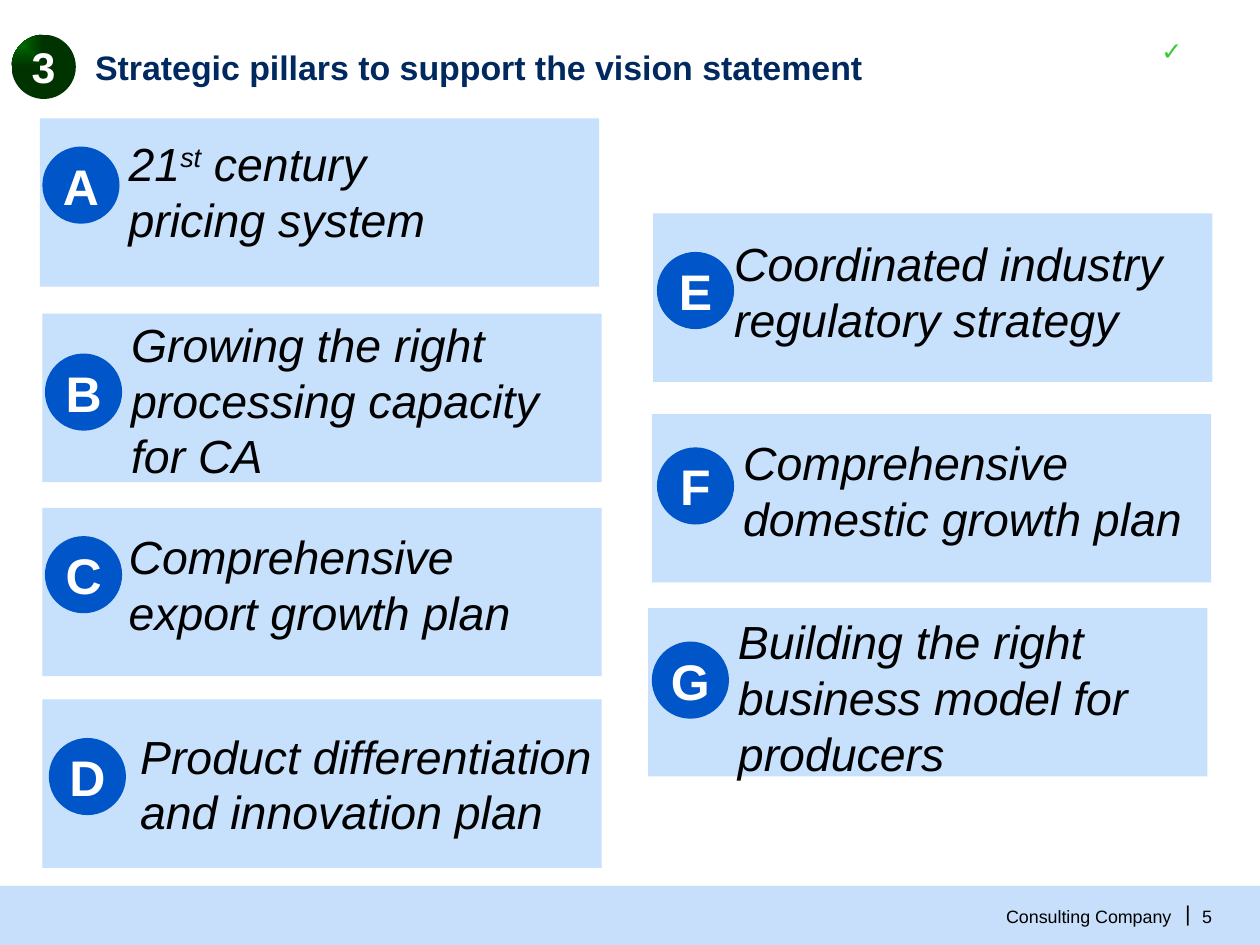
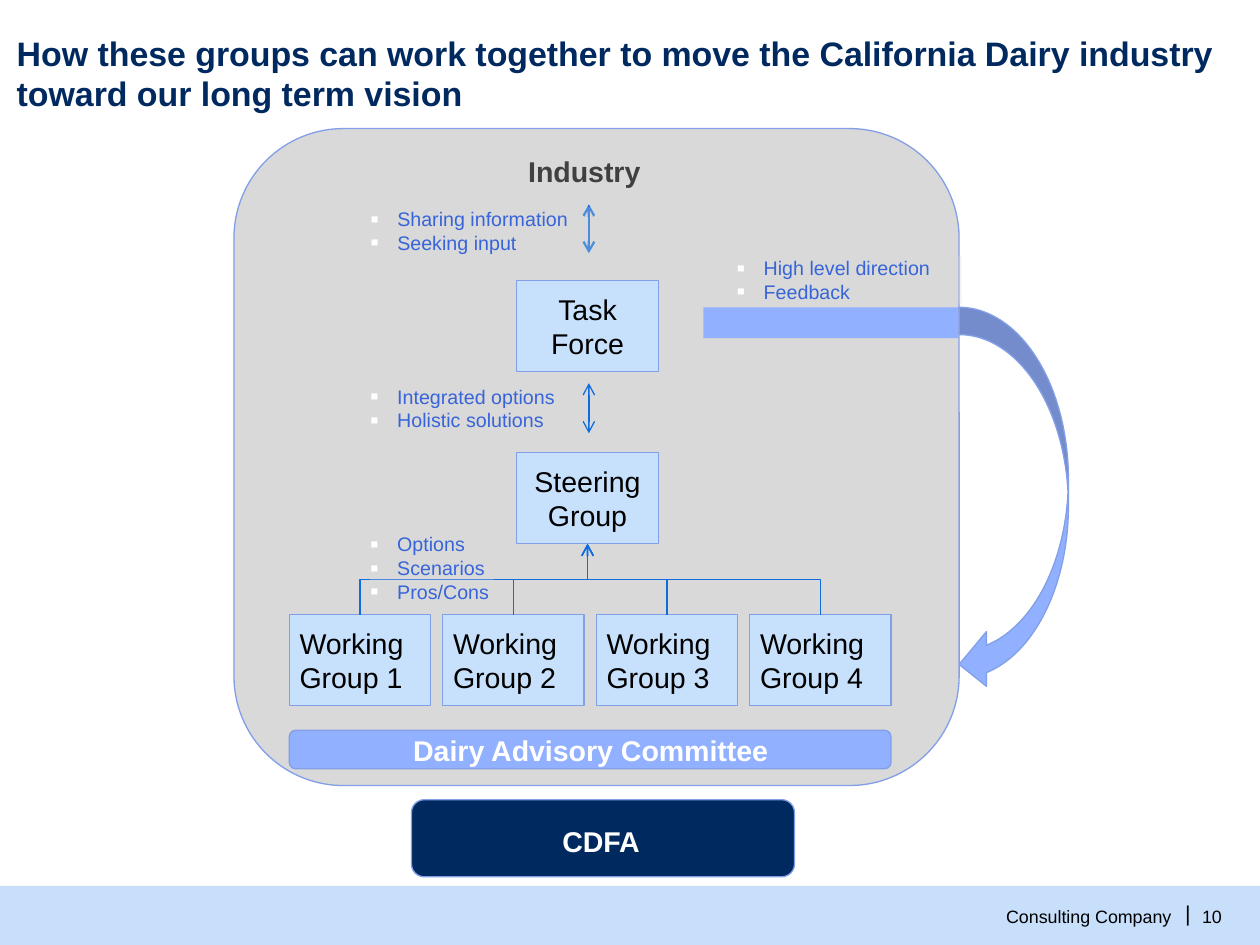
from lxml import etree
from pptx import Presentation
from pptx.dml.color import RGBColor
from pptx.enum.shapes import MSO_CONNECTOR, MSO_SHAPE
from pptx.enum.text import MSO_ANCHOR, PP_ALIGN
from pptx.oxml.ns import qn
from pptx.util import Inches, Pt

RECTANGLE = MSO_SHAPE.RECTANGLE
ROUNDED = MSO_SHAPE.ROUNDED_RECTANGLE
OVAL = MSO_SHAPE.OVAL
CURVED_ARROW = MSO_SHAPE.CURVED_LEFT_ARROW
STRAIGHT = MSO_CONNECTOR.STRAIGHT
ELBOW = MSO_CONNECTOR.ELBOW
LEFT, CENTER, RIGHT = PP_ALIGN.LEFT, PP_ALIGN.CENTER, PP_ALIGN.RIGHT
TOP, MIDDLE = MSO_ANCHOR.TOP, MSO_ANCHOR.MIDDLE

FONT = "Arial"
NAVY, BLACK, WHITE = "002960", "000000", "FFFFFF"
BAND, PANEL, BADGE = "C7DFFB", "C7E0FB", "0055C8"
GRAY, DARK_GRAY = "D9D9D9", "404040"
PERIWINKLE, OUTLINE = "91B0FF", "839FE7"
ARROW, LIST_TEXT, CHECK = "0E6CE0", "3764D8", "33CC33"

PILLARS = [
    ("A", (0.31, 0.92), (0.33, 1.14), (1, 1.05, 2.86), ["21", "st", " century pricing system"]),
    ("B", (0.33, 2.44), (0.35, 2.75), (1.02, 2.46, 3.63),
     ["Growing the right processing capacity for CA"]),
    ("C", (0.33, 3.95), (0.35, 4.17), (1, 4.11, 3.45), ["Comprehensive export growth plan"]),
    ("D", (0.33, 5.44), (0.38, 5.74), (1.09, 5.66, 3.63),
     ["Product differentiation and innovation plan"]),
    ("E", (5.08, 1.66), (5.11, 1.96), (5.71, 1.83, 3.65),
     ["Coordinated industry regulatory strategy"]),
    ("F", (5.07, 3.22), (5.11, 3.48), (5.78, 3.38, 3.61), ["Comprehensive domestic growth plan"]),
    ("G", (5.04, 4.73), (5.07, 4.99), (5.74, 4.77, 3.63),
     ["Building the right business model for producers"]),
]

EXCHANGES = [
    ((2.88, 4.14, 0.96, 0.56), ["Options", "Scenarios", "Pros/Cons"]),
    ((2.88, 2.99, 1.57, 0.37), ["Integrated options", "Holistic solutions"]),
    ((2.88, 1.61, 1.75, 0.37), ["Sharing information", "Seeking input"]),
    ((5.73, 1.99, 1.75, 0.37), ["High level direction", "Feedback"]),
]


def color(value):
    return RGBColor.from_string(value)


def child(parent, tag, **attributes):
    return etree.SubElement(parent, qn(tag), attributes)


def style_paragraph(paragraph, size, text_color, bold=False, italic=False, align=LEFT):
    paragraph.alignment = align
    font = paragraph.font
    font.name, font.size = FONT, Pt(size)
    font.bold, font.italic = bold, italic
    font.color.rgb = color(text_color)


def set_frame(shape, anchor=TOP, inset=0.0):
    frame = shape.text_frame
    frame.word_wrap = True
    frame.vertical_anchor = anchor
    frame.margin_left = frame.margin_right = Inches(inset)
    frame.margin_top = frame.margin_bottom = Inches(inset)
    return frame


def write(shape, text, size, text_color, anchor=TOP, inset=0.0, **style):
    frame = set_frame(shape, anchor, inset)
    frame.text = text
    style_paragraph(frame.paragraphs[0], size, text_color, **style)


def add_box(slide, kind, box, fill, line=None):
    shape = slide.shapes.add_shape(kind, *map(Inches, box))
    shape.shadow.inherit = False
    shape.fill.solid()
    shape.fill.fore_color.rgb = color(fill)
    if line:
        shape.line.color.rgb = color(line)
        shape.line.width = Pt(0.75)
    else:
        shape.line.fill.background()
    return shape


def add_text(slide, box, text, size, text_color, **style):
    shape = slide.shapes.add_textbox(*map(Inches, box))
    write(shape, text, size, text_color, **style)
    return shape


def add_slide(presentation, title, title_box, number):
    slide = presentation.slides.add_slide(presentation.slide_layouts[5])
    placeholder = slide.shapes.title
    placeholder.left, placeholder.top, placeholder.width, placeholder.height = map(Inches, title_box)
    write(placeholder, title, 19, NAVY, bold=True)
    add_box(slide, RECTANGLE, (0, 6.89, 9.8, 0.46), BAND)
    add_text(slide, (7.75, 7.04, 1.36, 0.17), "Consulting Company", 10, BLACK,
             anchor=MIDDLE, align=RIGHT)
    add_text(slide, (9.21, 7, 0.05, 0.2), "|", 12, BLACK, anchor=MIDDLE, align=RIGHT)
    add_text(slide, (9.35, 7.04, 0.23, 0.17), number, 10, BLACK, anchor=MIDDLE)
    return slide


def add_section_badge(slide, number):
    badge = add_box(slide, OVAL, (0.09, 0.27, 0.5, 0.5), BADGE)
    badge.fill.gradient()
    for stop, value in zip(badge.fill.gradient_stops, ("008000", "003300")):
        stop.color.rgb = color(value)
    gradient = badge._element.spPr.find(qn("a:gradFill"))
    gradient.remove(gradient.find(qn("a:lin")))
    shade = child(gradient, "a:path")
    shade.set("path", "rect")
    child(shade, "a:fillToRect", r="100000", b="100000")
    write(badge, number, 24, WHITE, anchor=MIDDLE, bold=True, align=CENTER)


def add_pillar(slide, letter, panel, badge, text_place, pieces):
    add_box(slide, RECTANGLE, (*panel, 4.35, 1.31), PANEL)
    circle = add_box(slide, OVAL, (*badge, 0.6, 0.6), BADGE)
    write(circle, letter, 28, WHITE, anchor=MIDDLE, bold=True, align=CENTER)
    label = add_text(slide, (*text_place, 0.86), "", 26, BLACK, italic=True)
    for piece in pieces:
        run = label.text_frame.paragraphs[0].add_run()
        run.text = piece
        if piece == "st":
            run.font._element.set("baseline", "30000")


def add_group(slide, x, y, text, align=CENTER):
    group = add_box(slide, RECTANGLE, (x, y, 1.1, 0.71), PANEL, OUTLINE)
    write(group, text, 16, BLACK, anchor=MIDDLE, inset=0.08, align=align)
    return group


def style_connector(connector, width, ends):
    connector.line.color.rgb = color(ARROW)
    connector.line.width = Pt(width)
    properties = connector._element.spPr
    for end in ends:
        child(properties.find(qn("a:ln")), end, type="arrow")
    child(properties, "a:effectLst")


def add_double_arrow(slide, x, top, bottom, width):
    connector = slide.shapes.add_connector(
        STRAIGHT, Inches(x), Inches(top), Inches(x), Inches(bottom))
    style_connector(connector, width, ("a:headEnd", "a:tailEnd"))


def add_branch(slide, parent, member):
    connector = slide.shapes.add_connector(ELBOW, 0, 0, 0, 0)
    connector.begin_connect(parent, 2)
    connector.end_connect(member, 0)
    start_x, start_y = parent.left + parent.width // 2, parent.top + parent.height
    end_x, end_y = member.left + member.width // 2, member.top
    drop, span = end_y - start_y, abs(end_x - start_x)
    connector.left = (start_x + end_x - drop) // 2
    connector.top = (start_y + end_y - span) // 2
    connector.width, connector.height = drop, span
    to_right = end_x > start_x
    transform = connector._element.spPr.find(qn("a:xfrm"))
    transform.set("rot", str((270 if to_right else 90) * 60000))
    transform.set("flipH", "1" if to_right else "0")
    transform.set("flipV", "0")
    style_connector(connector, 0.75, ("a:headEnd",))


def add_bullets(slide, box, items):
    shape = add_box(slide, RECTANGLE, box, GRAY)
    fill = shape._element.spPr.find(qn("a:solidFill"))
    child(fill[0], "a:alpha", val="30000")
    frame = set_frame(shape)
    frame.text = "\n".join(items)
    for paragraph in frame.paragraphs:
        properties = paragraph._p.get_or_add_pPr()
        properties.set("marL", str(Inches(0.21)))
        properties.set("indent", str(-Inches(0.21)))
        child(child(properties, "a:buClr"), "a:srgbClr", val=WHITE)
        child(properties, "a:buSzPct", val="125000")
        child(properties, "a:buFont", typeface=FONT)
        child(properties, "a:buChar", char="▪")
        style_paragraph(paragraph, 11, LIST_TEXT)


def build_pillars(presentation):
    slide = add_slide(presentation, "Strategic pillars to support the vision statement",
                      (0.74, 0.36, 8.6, 0.32), "5")
    add_section_badge(slide, "3")
    for pillar in PILLARS:
        add_pillar(slide, *pillar)
    add_text(slide, (8.8, 0.23, 0.63, 0.69), "✓", 14, CHECK, inset=0.05, align=CENTER)


def build_collaboration(presentation):
    slide = add_slide(
        presentation,
        "How these groups can work together to move the California Dairy industry "
        "toward our long term vision",
        (0.13, 0.25, 9.43, 0.64), "10")
    heading = {"bold": True, "align": CENTER}
    add_box(slide, ROUNDED, (1.82, 1, 5.64, 5.11), GRAY, OUTLINE)
    add_text(slide, (3.97, 1.2, 1.15, 0.27), "Industry", 16, DARK_GRAY, **heading)
    add_group(slide, 4.02, 2.18, "Task Force")
    steering = add_group(slide, 4.02, 3.52, "Steering Group")
    members = [add_group(slide, 2.25 + 1.194 * index, 4.78, f"Working Group {index + 1}", LEFT)
               for index in range(4)]
    add_double_arrow(slide, 4.58, 1.59, 1.97, 1.25)
    add_double_arrow(slide, 4.58, 2.98, 3.37, 0.75)
    for member in members:
        add_branch(slide, steering, member)
    add_box(slide, CURVED_ARROW, (7.46, 2.39, 0.85, 2.99), PERIWINKLE, OUTLINE)
    add_box(slide, RECTANGLE, (5.47, 2.39, 1.98, 0.24), PERIWINKLE)
    for box, items in EXCHANGES:
        add_bullets(slide, box, items)
    add_box(slide, ROUNDED, (2.25, 5.68, 4.68, 0.3), PERIWINKLE, OUTLINE)
    add_text(slide, (3, 5.7, 3.19, 0.27), "Dairy Advisory Committee", 16, WHITE, **heading)
    add_box(slide, ROUNDED, (3.2, 6.22, 2.98, 0.6), NAVY, OUTLINE)
    add_text(slide, (4.1, 6.41, 1.15, 0.27), "CDFA", 16, WHITE, **heading)


def main():
    presentation = Presentation()
    presentation.slide_width, presentation.slide_height = Inches(9.8), Inches(7.35)
    build_pillars(presentation)
    build_collaboration(presentation)
    presentation.save("out.pptx")


if __name__ == "__main__":
    main()
